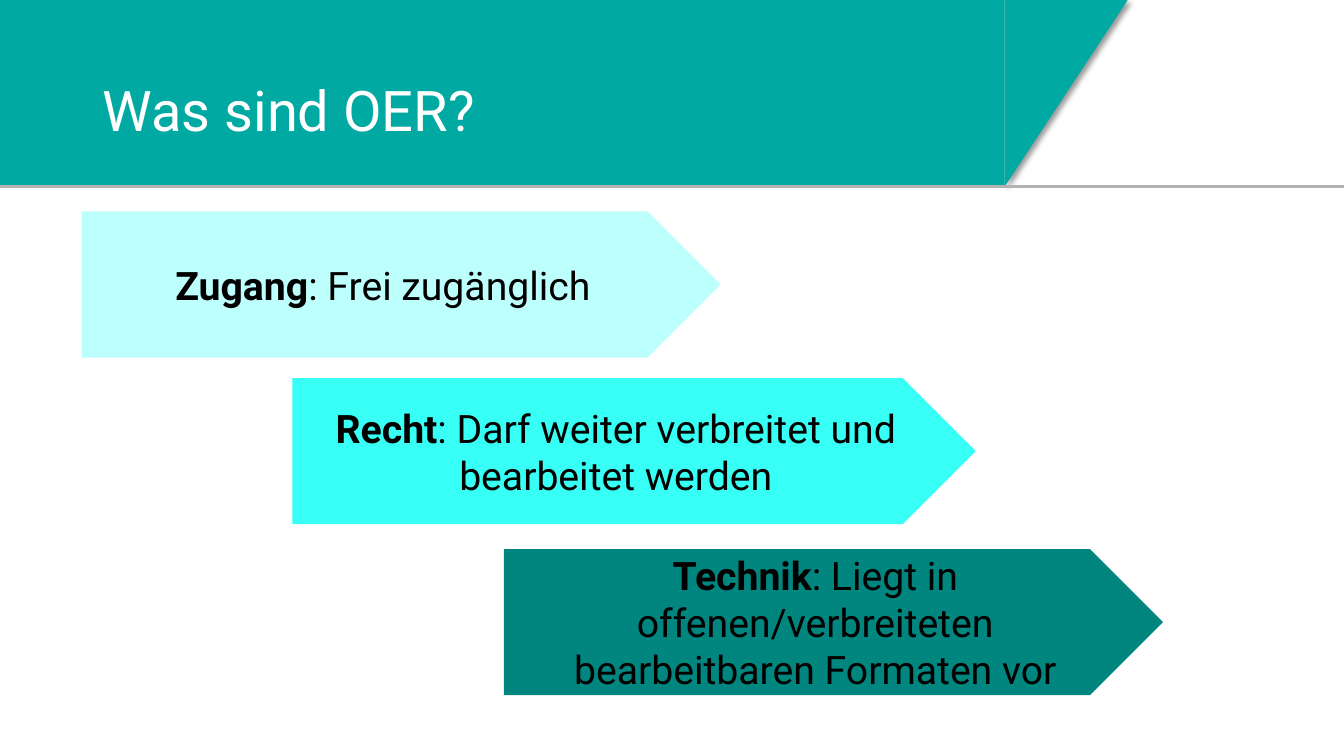
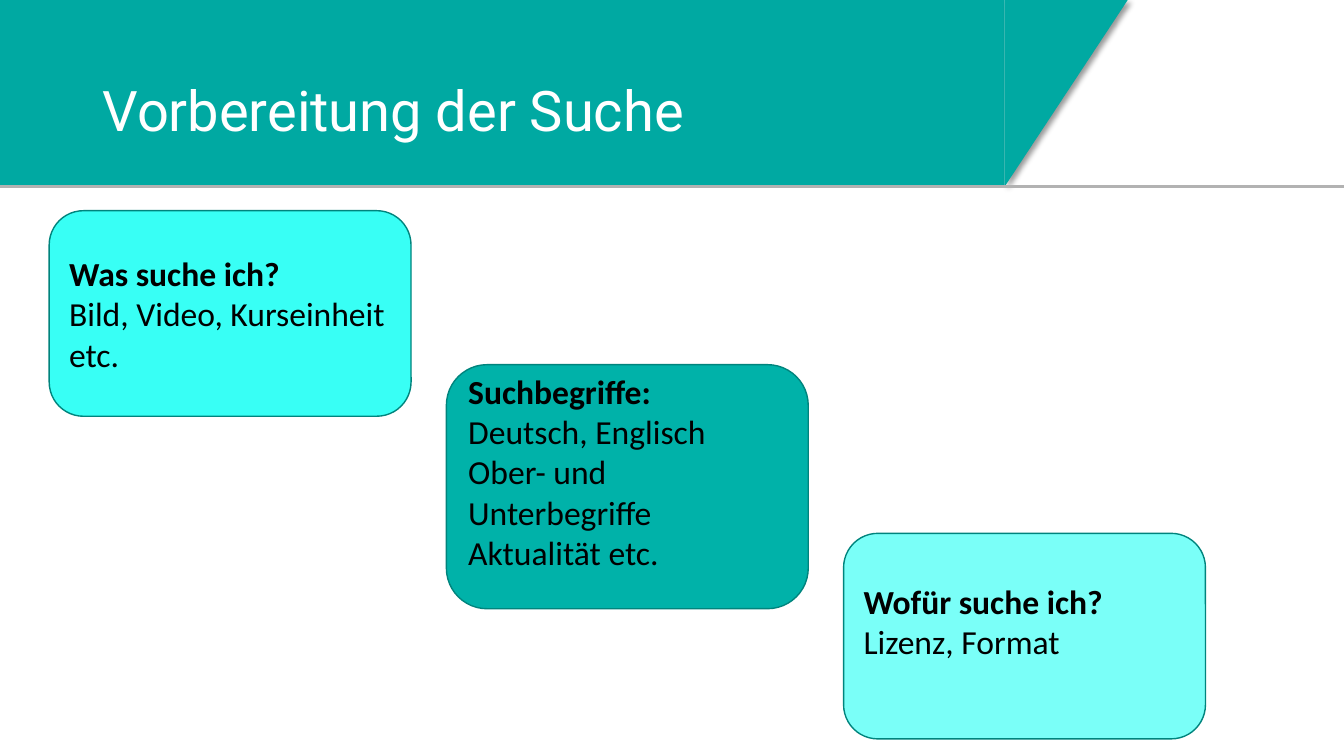
"""Build two slides on open educational resources (OER) and save them to out.pptx."""
import pptx
import pptx.dml.color
import pptx.enum.shapes
import pptx.enum.text
import pptx.oxml
import pptx.oxml.ns
import pptx.util

Cm = pptx.util.Cm
Pt = pptx.util.Pt
RGBColor = pptx.dml.color.RGBColor
MSO_SHAPE = pptx.enum.shapes.MSO_SHAPE
PP_ALIGN = pptx.enum.text.PP_ALIGN
MIDDLE = pptx.enum.text.MSO_ANCHOR.MIDDLE

WHITE = RGBColor(0xFF, 0xFF, 0xFF)
BLACK = RGBColor(0x00, 0x00, 0x00)
GREY = RGBColor(0xB2, 0xB2, 0xB2)
BAND = RGBColor(0x00, 0xA9, 0xA2)
PALE = RGBColor(0xBD, 0xFF, 0xFC)
LIGHT = RGBColor(0x7A, 0xFF, 0xF8)
BRIGHT = RGBColor(0x38, 0xFF, 0xF5)
TEAL = RGBColor(0x00, 0xB2, 0xA9)
DARK = RGBColor(0x00, 0x85, 0x7F)
OUTLINE = RGBColor(0x00, 0x84, 0x7D)

SLIDE_WIDTH = 33.87
BAND_WIDTH = 25.32
BAND_HEIGHT = 4.7
TIP_WIDTH = 3.1


def add_block(slide, preset, left, top, width, height, fill):
    block = slide.shapes.add_shape(preset, Cm(left), Cm(top), Cm(width), Cm(height))
    block.shadow.inherit = False
    block.fill.solid()
    block.fill.fore_color.rgb = fill
    block.line.fill.background()
    block.text_frame.word_wrap = True
    block.text_frame.vertical_anchor = MIDDLE
    return block


def add_run(paragraph, text, font, size, color=BLACK, bold=False):
    run = paragraph.add_run()
    run.text = text
    run.font.name = font
    run.font.size = Pt(size)
    run.font.color.rgb = color
    run.font.bold = bold


deck = pptx.Presentation()
deck.slide_width = Cm(SLIDE_WIDTH)
deck.slide_height = Cm(19.05)

slides = []
for heading in ("Was sind OER?", "Vorbereitung der Suche"):
    slide = deck.slides.add_slide(deck.slide_layouts[6])
    slides.append(slide)
    add_block(slide, MSO_SHAPE.RECTANGLE, 0, 0, BAND_WIDTH, BAND_HEIGHT, BAND)

    offset = (BAND_HEIGHT - TIP_WIDTH) / 2
    tip = add_block(slide, MSO_SHAPE.RIGHT_TRIANGLE, BAND_WIDTH - offset, offset,
                    BAND_HEIGHT, TIP_WIDTH, BAND)
    tip.rotation = 90
    effects = tip.element.spPr.find(pptx.oxml.ns.qn("a:effectLst"))
    effects.append(pptx.oxml.parse_xml(
        f'<a:outerShdw {pptx.oxml.ns.nsdecls("a")} blurRad="{Pt(4)}" dist="{Pt(3)}"'
        ' dir="2700000" algn="tl" rotWithShape="0">'
        '<a:srgbClr val="000000"><a:alpha val="40000"/></a:srgbClr></a:outerShdw>'))

    rule = slide.shapes.add_connector(pptx.enum.shapes.MSO_CONNECTOR.STRAIGHT,
                                      Cm(SLIDE_WIDTH), Cm(BAND_HEIGHT), Cm(0), Cm(BAND_HEIGHT))
    rule.line.color.rgb = GREY
    rule.line.width = Pt(2.25)
    rule.element.spPr.append(pptx.oxml.parse_xml(
        f'<a:effectLst {pptx.oxml.ns.nsdecls("a")}/>'))

    title = slide.shapes.add_textbox(Cm(2.34), Cm(1.02), Cm(22.99), Cm(3.68)).text_frame
    title.word_wrap = True
    title.vertical_anchor = MIDDLE
    title.paragraphs[0].line_spacing = 0.9
    add_run(title.paragraphs[0], heading, "Roboto", 40, WHITE)

definition, preparation = slides

criteria = (
    (2.06, 5.33, 16.1, PALE, "Zugang", ": Frei zugänglich"),
    (7.37, 9.53, 17.22, BRIGHT, "Recht", ": Darf weiter verbreitet und bearbeitet werden"),
    (12.7, 13.84, 16.61, DARK, "Technik",
     ": Liegt in offenen/verbreiteten bearbeitbaren Formaten vor"),
)
for left, top, width, fill, term, meaning in criteria:
    criterion = add_block(definition, MSO_SHAPE.PENTAGON, left, top, width, 3.68, fill)
    paragraph = criterion.text_frame.paragraphs[0]
    paragraph.alignment = PP_ALIGN.CENTER
    add_run(paragraph, term, "Roboto", 28, bold=True)
    add_run(paragraph, meaning, "Roboto", 28)

questions = (
    (5.31, 5.18, 0.13, BRIGHT, ("Was suche ich?", "Bild, Video, Kurseinheit etc.")),
    (9.19, 6.15, 0.9, TEAL, ("Suchbegriffe:", "Deutsch, Englisch",
                             "Ober- und Unterbegriffe", "Aktualität etc.")),
    (13.44, 5.18, 0.9, LIGHT, ("Wofür suche ich?", "Lizenz, Format")),
)
for column, (top, height, bottom_inset, fill, lines) in enumerate(questions):
    question = add_block(preparation, MSO_SHAPE.ROUNDED_RECTANGLE,
                         1.24 + 10.01 * column, top, 9.12, height, fill)
    question.line.color.rgb = OUTLINE
    question.line.width = Pt(1)
    frame = question.text_frame
    frame.margin_bottom = Cm(bottom_inset)
    for number, line in enumerate(lines):
        paragraph = frame.add_paragraph() if number else frame.paragraphs[0]
        paragraph.alignment = PP_ALIGN.LEFT
        add_run(paragraph, line, "Calibri", 24, bold=number == 0)

deck.save("out.pptx")
